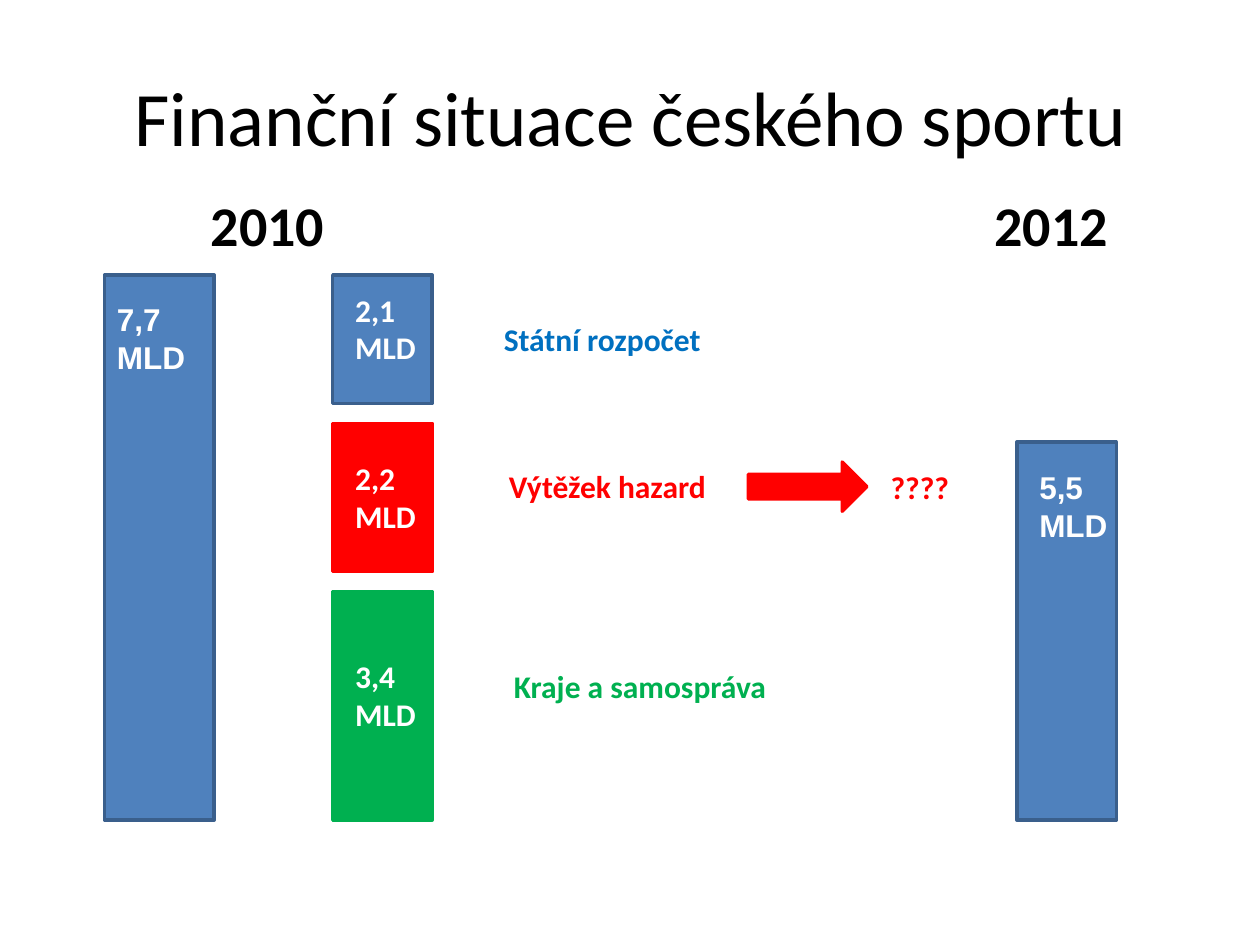
from pptx import Presentation
from pptx.dml.color import RGBColor
from pptx.enum.shapes import MSO_SHAPE
from pptx.enum.text import MSO_ANCHOR, PP_ALIGN
from pptx.util import Inches, Pt

RECT, ARROW = MSO_SHAPE.RECTANGLE, MSO_SHAPE.RIGHT_ARROW
LEFT, CENTER = PP_ALIGN.LEFT, PP_ALIGN.CENTER
TOP, MIDDLE = MSO_ANCHOR.TOP, MSO_ANCHOR.MIDDLE

WIDTH, HEIGHT = Inches(10), Inches(7.5)
COLORS = {
    "black": "000000", "white": "FFFFFF", "blue": "4F81BD", "edge": "3A5F8C",
    "label_blue": "0070C0", "red": "FF0000", "green": "00B050",
}
BASELINE = 86.8
SPLIT_X, BAR_W = 26.4, 7.9
VALUE_INDENT = 0.8

SOURCES = [
    ("2,1 MLD", "Státní rozpočet", "blue", "edge", "label_blue", 29.1, 13.6, 30.1, 39, 33.2),
    ("2,2 MLD", "Výtěžek hazard", "red", "red", "red", 44.8, 15.7, 47.9, 39.4, 48.8),
    ("3,4 MLD", "Kraje a samospráva", "green", "green", "green", 62.6, 24.2, 68.9, 39.8, 69.9),
]
TOTALS = [
    ("7,7\nMLD", 8.3, 29.1, 8.7, 8.3, 31.1),
    ("5,5\nMLD", 80.7, 46.8, BAR_W, 80.7 + VALUE_INDENT, 48.9),
]
YEARS = [("2010", 10.6), ("2012", 72.8)]


def rgb(name):
    return RGBColor.from_string(COLORS[name])


def place(x, y, w, h):
    return [int(size * share / 100)
            for size, share in ((WIDTH, x), (HEIGHT, y), (WIDTH, w), (HEIGHT, h))]


def add_block(s, kind, x, y, w, h, fill, line):
    sp = s.shapes.add_shape(kind, *place(x, y, w, h))
    sp.shadow.inherit = False
    sp.fill.solid()
    sp.fill.fore_color.rgb = rgb(fill)
    sp.line.color.rgb = rgb(line)
    sp.line.width = Pt(2)


def add_text(s, text, x, y, w, h, size=18, font="Calibri", color="black",
             bold=True, align=LEFT, anchor=TOP):
    tf = s.shapes.add_textbox(*place(x, y, w, h)).text_frame
    tf.word_wrap = True
    tf.vertical_anchor = anchor
    for i, line in enumerate(text.split("\n")):
        p = tf.add_paragraph() if i else tf.paragraphs[0]
        p.alignment = align
        r = p.add_run()
        r.text = line
        r.font.size = Pt(size)
        r.font.name = font
        r.font.bold = bold
        r.font.color.rgb = rgb(color)


def add_total(s, value, x, y, w, text_x, text_y):
    add_block(s, RECT, x, y, w, BASELINE - y, "blue", "edge")
    add_text(s, value, text_x, text_y, 11, 9.4, font="Arial", color="white")


def add_source(s, value, label, fill, line, color, y, h, value_y, label_x, label_y):
    add_block(s, RECT, SPLIT_X, y, BAR_W, h, fill, line)
    add_text(s, value, SPLIT_X + VALUE_INDENT, value_y, 9.4, 9.4, color="white")
    add_text(s, label, label_x, label_y, 23.6, 5.4, color=color)


def main():
    prs = Presentation()
    prs.slide_width, prs.slide_height = WIDTH, HEIGHT
    s = prs.slides.add_slide(prs.slide_layouts[6])
    add_text(s, "Finanční situace českého sportu", 5.1, 3.9, 90, 16.7,
             size=44, bold=False, align=CENTER, anchor=MIDDLE)
    for year, x in YEARS:
        add_text(s, year, x, 19.5, 21.3, 8.5, size=32, align=CENTER)
    for total in TOTALS:
        add_total(s, *total)
    for source in SOURCES:
        add_source(s, *source)
    add_block(s, ARROW, 59.4, 48.9, 9.4, 5.2, "red", "red")
    add_text(s, "????", 69.7, 48.9, 23.6, 5.4, color="red")
    prs.save("out.pptx")


if __name__ == "__main__":
    main()
